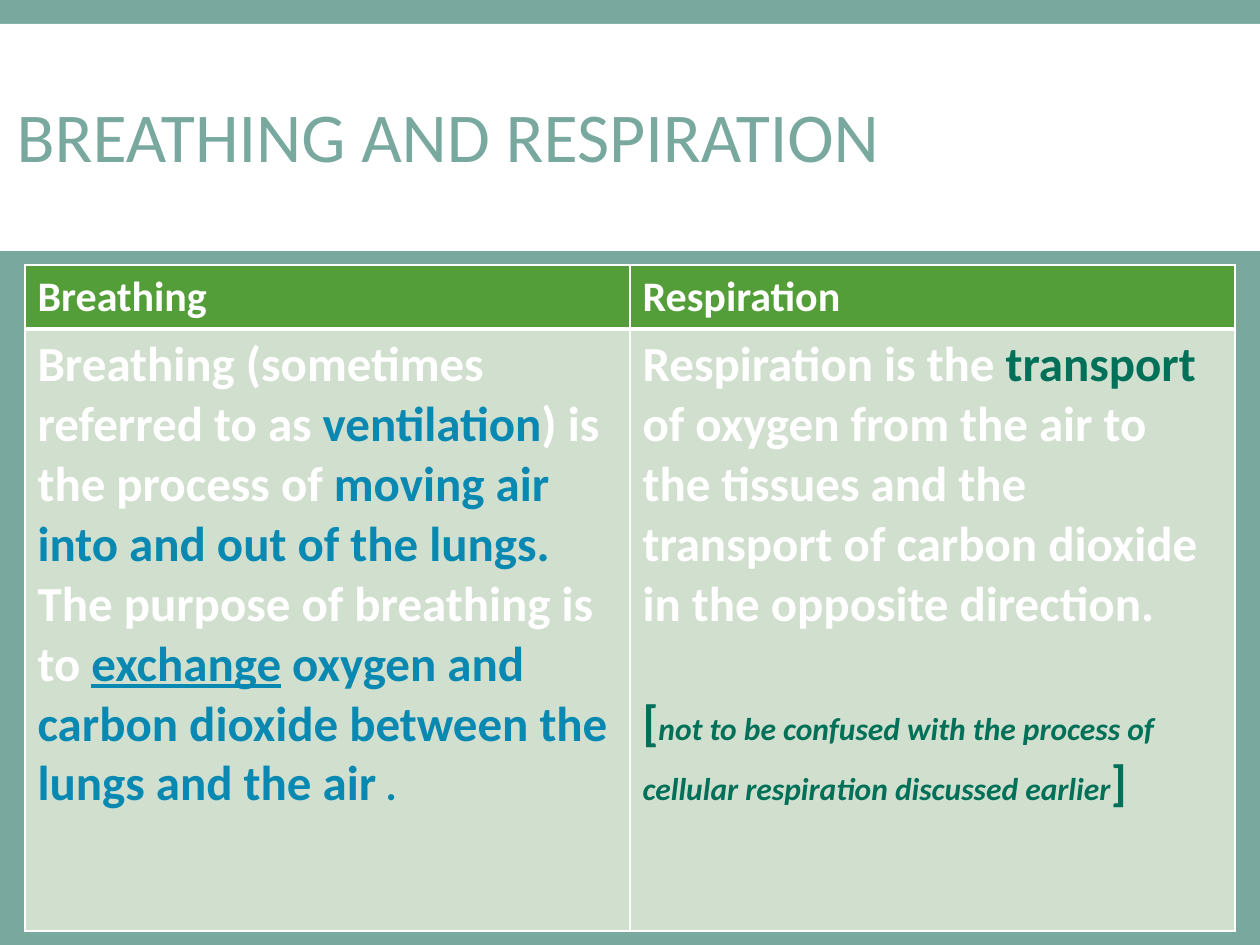
from dataclasses import dataclass

from lxml import etree
from pptx import Presentation
from pptx.dml.color import RGBColor
from pptx.enum.shapes import MSO_SHAPE
from pptx.enum.text import MSO_ANCHOR, PP_ALIGN
from pptx.oxml.ns import qn
from pptx.util import Emu, Pt

RECT = MSO_SHAPE.RECTANGLE
MIDDLE = MSO_ANCHOR.MIDDLE
LEFT = PP_ALIGN.LEFT
TITLE_ONLY = 5
EMU_PER_PX = 914400 / 126


@dataclass(frozen=True)
class Theme:
    font: str = "Calibri"
    sage: str = "79A99E"
    white: str = "FFFFFF"
    green: str = "549E39"
    pale: str = "D1DFCE"
    blue: str = "0989B1"
    teal: str = "017058"
    title: int = 40
    head: int = 24
    body: int = 28
    note: int = 18
    line_gap: int = 34


THEME = Theme()


def px(n):
    return Emu(round(n * EMU_PER_PX))


def rgb(color):
    return RGBColor.from_string(color)


class SlideBuilder:
    """Holds the theme and the slide being filled."""

    def __init__(self, prs, theme):
        self.theme = theme
        self.slide = prs.slides.add_slide(prs.slide_layouts[TITLE_ONLY])

    def background(self, color):
        fill = self.slide.background.fill
        fill.solid()
        fill.fore_color.rgb = rgb(color)

    def band(self, x, y, w, h, color):
        """Add a plain rectangle behind everything else."""
        sp = self.slide.shapes.add_shape(RECT, px(x), px(y), px(w), px(h))
        sp.shadow.inherit = False
        sp.fill.solid()
        sp.fill.fore_color.rgb = rgb(color)
        sp.line.fill.background()
        self.slide.shapes._spTree.insert(2, sp._element)

    def run(self, p, text, size, color, bold=True, italic=False, underline=False):
        r = p.add_run()
        r.text = text
        f = r.font
        f.name, f.size, f.color.rgb = self.theme.font, Pt(size), rgb(color)
        f.bold, f.italic, f.underline = bold, italic, underline

    def title(self, text, x, y, w, h):
        sp = self.slide.shapes.title
        sp.left, sp.top, sp.width, sp.height = px(x), px(y), px(w), px(h)
        tf = sp.text_frame
        tf.vertical_anchor = MIDDLE
        p = tf.paragraphs[0]
        p.alignment = LEFT
        p.line_spacing = 0.85
        self.run(p, text, self.theme.title, self.theme.sage, bold=False)

    def border(self, cell, bottom):
        """Draw 1 pt cell borders, with a bottom border of its own width."""
        tcPr = cell._tc.get_or_add_tcPr()
        for i, (side, width) in enumerate(
            [("lnL", 1), ("lnR", 1), ("lnT", 1), ("lnB", bottom)]
        ):
            ln = etree.Element(qn(f"a:{side}"), w=str(Pt(width)))
            fill = etree.SubElement(ln, qn("a:solidFill"))
            etree.SubElement(fill, qn("a:srgbClr"), val=self.theme.white)
            tcPr.insert(i, ln)

    def cell(self, cell, paragraphs, fill, bottom=1):
        """Fill a cell; each paragraph is a list of (text, size, color, style)."""
        cell.fill.solid()
        cell.fill.fore_color.rgb = rgb(fill)
        self.border(cell, bottom)
        tf = cell.text_frame
        for i, runs in enumerate(paragraphs):
            p = tf.add_paragraph() if i else tf.paragraphs[0]
            for text, size, color, style in runs:
                self.run(p, text, size, color, **style)

    def table(self, x, y, col_width, row_heights, heads, bodies):
        t = self.theme
        cols = len(heads)
        frame = self.slide.shapes.add_table(
            len(row_heights), cols, px(x), px(y),
            px(col_width * cols), px(sum(row_heights)))
        table = frame.table
        for col in table.columns:
            col.width = px(col_width)
        for row, height in zip(table.rows, row_heights):
            row.height = px(height)
        for c, (head, body) in enumerate(zip(heads, bodies)):
            self.cell(table.cell(0, c), [[(head, t.head, t.white, {})]], t.green, 3)
            self.cell(table.cell(1, c), body, t.pale)
        return table


def main():
    t = THEME
    prs = Presentation()
    prs.slide_width, prs.slide_height = px(1260), px(945)

    s = SlideBuilder(prs, t)
    s.background(t.sage)
    s.band(0, 24, 1260, 227, t.white)
    s.title("BREATHING AND RESPIRATION", 4, 37, 1012, 208)

    breathing = [
        [("Breathing (sometimes referred to as ", t.body, t.white, {}),
         ("ventilation", t.body, t.blue, {}),
         (") is the process of ", t.body, t.white, {}),
         ("moving air into and out of the lungs.", t.body, t.blue, {})],
        [("The purpose of breathing is to ", t.body, t.white, {}),
         ("exchange", t.body, t.blue, {"underline": True}),
         (" oxygen and carbon dioxide between the lungs and the air",
          t.body, t.blue, {}),
         (" .", t.head, t.blue, {})],
    ]
    respiration = [
        [("Respiration is the ", t.body, t.white, {}),
         ("transport ", t.body, t.teal, {}),
         ("of oxygen from the air to the tissues and the transport of "
          "carbon dioxide in the opposite direction.", t.body, t.white, {})],
        [("[", t.body, t.teal, {}),
         ("not to be confused with the process of cellular respiration "
          "discussed earlier", t.note, t.teal, {"italic": True}),
         ("]", t.body, t.teal, {})],
    ]
    table = s.table(25, 265, 605, [63, 602],
                    ["Breathing", "Respiration"], [breathing, respiration])
    note = table.cell(1, 1).text_frame.paragraphs[1]
    note.space_before = Pt(t.line_gap)

    prs.save("out.pptx")


if __name__ == "__main__":
    main()
